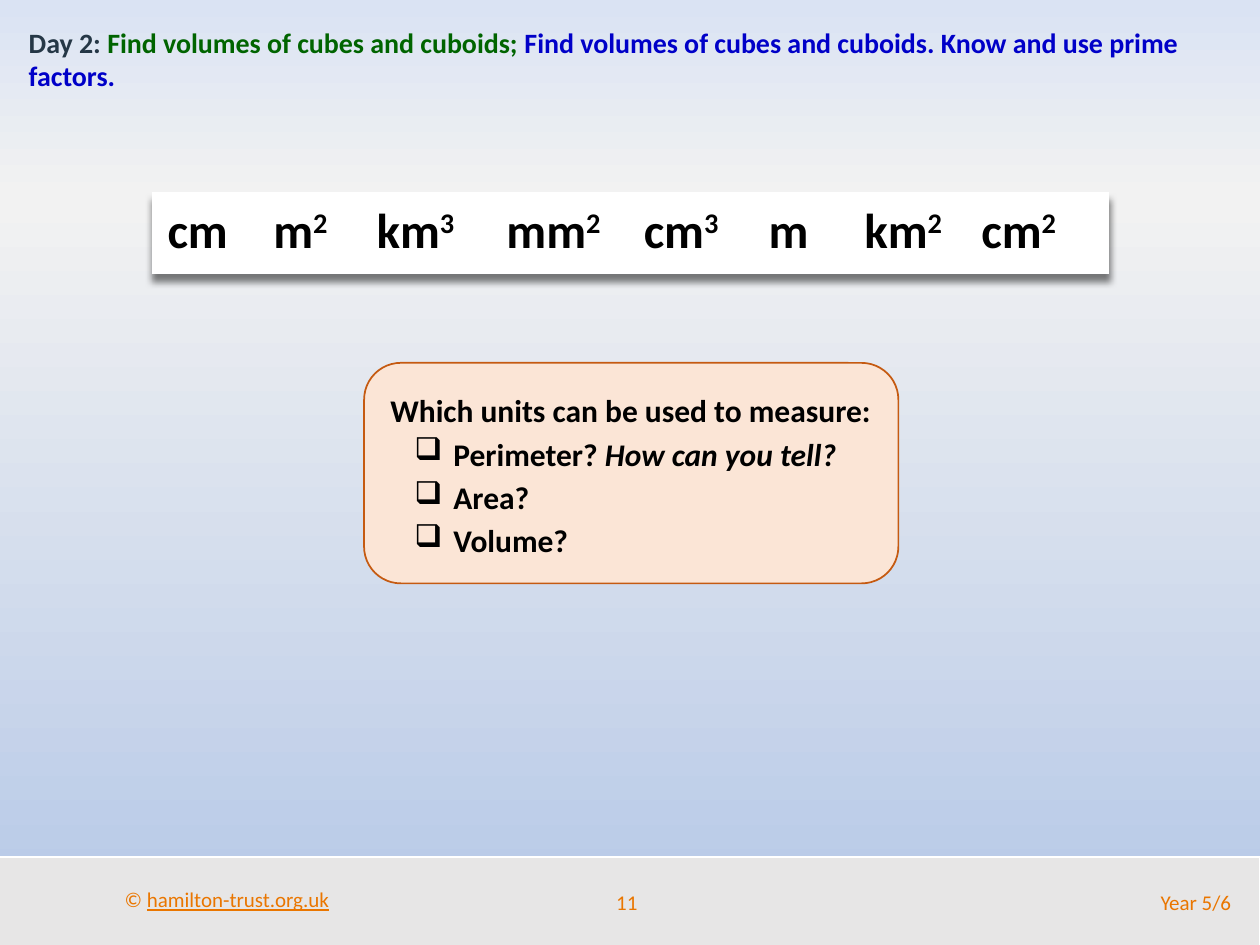
from copy import deepcopy

from lxml.etree import SubElement
from pptx import Presentation
from pptx.dml.color import RGBColor
from pptx.enum.shapes import MSO_SHAPE
from pptx.enum.text import MSO_ANCHOR, MSO_AUTO_SIZE, PP_ALIGN
from pptx.oxml.ns import qn
from pptx.util import Emu, Inches, Pt

WHITE = RGBColor(0xFF, 0xFF, 0xFF)
BLACK = RGBColor(0, 0, 0)
SLATE = RGBColor(0x25, 0x37, 0x46)
GREEN = RGBColor(0, 0x64, 0)
BLUE = RGBColor(0, 0, 0xC8)
ORANGE = RGBColor(0xEA, 0x76, 0)
RUST = RGBColor(0xC5, 0x5A, 0x11)
PEACH = RGBColor(0xFB, 0xE5, 0xD6)
GREY = RGBColor(0xE7, 0xE6, 0xE6)
SKY = [(0, RGBColor(0xDA, 0xE3, 0xF3)), (0.21, RGBColor(0xF2, 0xF2, 0xF2)),
       (1, RGBColor(0xB4, 0xC7, 0xE7))]

WIDTH, HEIGHT = 10, 7.5
FOOTER_TOP, FOOTER_ROW = 6.8, 6.96
FOOTER = {"size": Pt(12), "color": ORANGE}
HEADING = {"size": Pt(16), "bold": True}
QUESTION = {"size": Pt(18), "bold": True, "color": BLACK}
UNIT = {"size": Pt(28), "bold": True, "color": BLACK}

OBJECTIVE = [("Day 2: ", {"color": SLATE}),
             ("Find volumes of cubes and cuboids; ", {"color": GREEN}),
             ("Find volumes of cubes and cuboids. Know and use prime factors.", {"color": BLUE})]
UNITS = [("cm", "", 0), ("m", "2", 0.84), ("km", "3", 1.66), ("mm", "2", 2.69),
         ("cm", "3", 3.78), ("m", "", 4.77), ("km", "2", 5.53), ("cm", "2", 6.46)]
PROMPT = [("Which units can be used to measure:", {})]
MEASURES = [[("Perimeter? ", {}), ("How can you tell?", {"italic": True})],
            [("Area?", {})], [("Volume?", {})]]
FOOTNOTES = [
    ((0.89, 6.99, 1.84, 0.3), [("© ", {}), ("hamilton-trust.org.uk", {"underline": True})],
     PP_ALIGN.LEFT, MSO_ANCHOR.TOP, False),
    ((4.58, FOOTER_ROW, 0.79, 0.4), [("11", {})], PP_ALIGN.CENTER, MSO_ANCHOR.MIDDLE, True),
    ((5.8, FOOTER_ROW, 4.07, 0.4), [("Year 5/6", {})], PP_ALIGN.RIGHT, MSO_ANCHOR.MIDDLE, True),
]


def inches(box):
    return [Inches(length) for length in box]


def write(paragraph, runs, base):
    for text, changes in runs:
        run = paragraph.add_run()
        run.text = text
        for name, value in {"name": "Calibri", **base, **changes}.items():
            if name == "color":
                run.font.color.rgb = value
            elif name == "baseline":
                run.font._element.set("baseline", value)
            else:
                setattr(run.font, name, value)


def add_panel(slide, kind, box, fill, line):
    panel = slide.shapes.add_shape(kind, *inches(box))
    panel.shadow.inherit = False
    panel.fill.solid()
    panel.fill.fore_color.rgb = fill
    panel.line.color.rgb = line
    panel.line.width = Pt(1)


def add_text(slide, box, wrap=True, anchor=MSO_ANCHOR.TOP, grow=False):
    frame = slide.shapes.add_textbox(*inches(box)).text_frame
    frame.word_wrap = wrap
    frame.vertical_anchor = anchor
    if grow:
        frame.auto_size = MSO_AUTO_SIZE.SHAPE_TO_FIT_TEXT
    return frame


def paint_background(slide):
    fill = slide.background.fill
    fill.gradient()
    fill.gradient_angle = 270
    stop_list = slide._element.find(".//" + qn("a:gsLst"))
    stop_list.insert(1, deepcopy(stop_list[0]))
    for stop, (position, color) in zip(fill.gradient_stops, SKY):
        stop.position = position
        stop.color.rgb = color


def add_units(slide):
    frame = slide.shapes.add_table(1, 1, *inches((1.21, 1.53, 7.59, 0.64)))
    table = frame.table
    table.first_row = table.horz_banding = False
    effects = SubElement(table._tbl.tblPr, qn("a:effectLst"))
    table._tbl.tblPr.insert(0, effects)
    shadow = SubElement(effects, qn("a:outerShdw"), blurRad="50800", dist="50800",
                        dir="5400000", algn="t", rotWithShape="0")
    shade = SubElement(shadow, qn("a:srgbClr"), val=str(BLACK))
    SubElement(shade, qn("a:alpha"), val="50000")

    cell = table.cell(0, 0)
    cell.margin_left = cell.margin_right = Inches(0.12)
    cell.margin_top = cell.margin_bottom = 0
    for side in ("a:lnL", "a:lnR", "a:lnT", "a:lnB"):
        border = SubElement(cell._tc.tcPr, qn(side), w=str(Pt(1)))
        SubElement(SubElement(border, qn("a:solidFill")), qn("a:srgbClr"), val=str(WHITE))
    cell.fill.solid()
    cell.fill.fore_color.rgb = WHITE

    row = cell.text_frame.paragraphs[0]
    tabs = SubElement(row._p.get_or_add_pPr(), qn("a:tabLst"))
    row.line_spacing = 1.15
    for unit, power, offset in UNITS:
        if offset:
            SubElement(tabs, qn("a:tab"), pos=str(Inches(offset)), algn="l")
        write(row, [("\t" + unit if offset else unit, {})], UNIT)
        if power:
            write(row, [(power, {"baseline": "30000"})], UNIT)


def add_questions(slide):
    add_panel(slide, MSO_SHAPE.ROUNDED_RECTANGLE, (2.89, 2.88, 4.24, 1.75), PEACH, RUST)
    frame = add_text(slide, (2.5, 3.01, 5, 1.47), grow=True)
    for index, runs in enumerate([PROMPT] + MEASURES):
        line = frame.add_paragraph() if index else frame.paragraphs[0]
        properties = line._p.get_or_add_pPr()
        margin, indent = (1, -0.31) if index else (0.5, 0)
        properties.set("marL", str(Inches(margin)))
        properties.set("indent", str(Inches(indent)))
        if index:
            SubElement(properties, qn("a:buChar"), char="❑")
        line.level = 1
        line.line_spacing = 1.15
        write(line, runs, QUESTION)


def main():
    deck = Presentation()
    deck.slide_width, deck.slide_height = inches((WIDTH, HEIGHT))
    slide = deck.slides.add_slide(deck.slide_layouts[6])
    paint_background(slide)
    add_panel(slide, MSO_SHAPE.RECTANGLE, (-0.06, FOOTER_TOP, WIDTH + 0.06, 0.72), GREY, WHITE)
    for box, runs, align, anchor, wrap in FOOTNOTES:
        note = add_text(slide, box, wrap, anchor, grow=not wrap).paragraphs[0]
        note.alignment = align
        write(note, runs, FOOTER)
    heading = add_text(slide, (0.13, 0.15, 9.77, 0.64), grow=True)
    write(heading.paragraphs[0], OBJECTIVE, HEADING)
    add_units(slide)
    add_questions(slide)
    deck.save("out.pptx")


if __name__ == "__main__":
    main()
